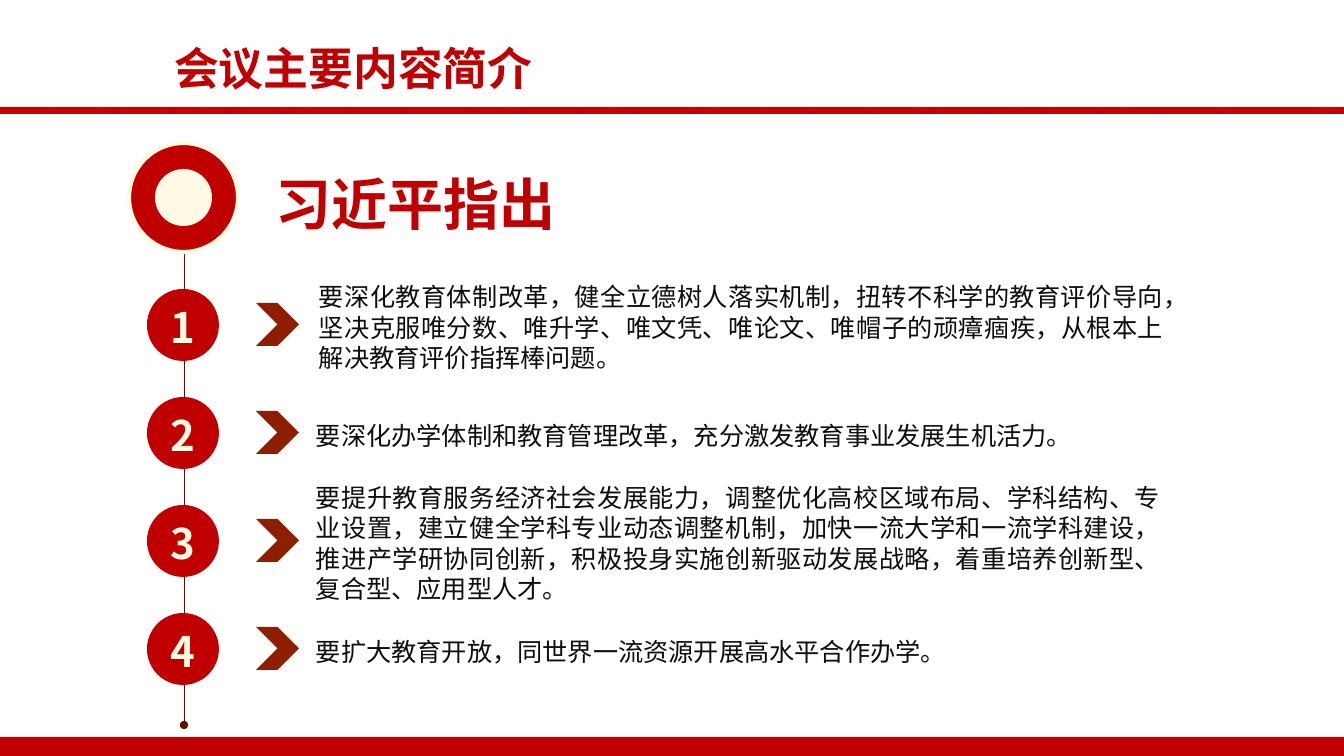
"""Build the meeting summary slide: a heading and a numbered timeline of four points."""
from lxml.etree import SubElement
from pptx import Presentation
from pptx.dml.color import RGBColor
from pptx.enum.dml import MSO_PATTERN
from pptx.enum.lang import MSO_LANGUAGE_ID
from pptx.enum.shapes import MSO_CONNECTOR, MSO_SHAPE
from pptx.enum.text import MSO_ANCHOR, MSO_AUTO_SIZE, PP_ALIGN
from pptx.oxml.ns import qn
from pptx.util import Emu, Pt

PX = 914400 / 100.8
FONT = "Noto Sans CJK SC"
RED, CREAM, BROWN, INK = "C00000", "FFFAE3", "8E1E00", "0D0D0D"


def box(*lengths):
    return [Emu(round(n * PX)) for n in lengths]


def write(sp, text, size, color, bold=True, align=PP_ALIGN.LEFT,
          anchor=MSO_ANCHOR.TOP, leading=1.3):
    tf = sp.text_frame
    tf.word_wrap = True
    tf.auto_size = MSO_AUTO_SIZE.NONE
    tf.vertical_anchor = anchor
    p = tf.paragraphs[0]
    p.alignment = align
    p.line_spacing = Pt(size * leading)
    r = p.add_run()
    r.text = text
    r.font.size = Pt(size)
    r.font.bold = bold
    r.font.color.rgb = RGBColor.from_string(color)
    r.font.name = FONT
    r.font.language_id = MSO_LANGUAGE_ID.SIMPLIFIED_CHINESE
    SubElement(r._r.rPr, qn("a:ea")).set("typeface", FONT)


prs = Presentation()
prs.slide_width, prs.slide_height = box(1344, 756)
s = prs.slides.add_slide(prs.slide_layouts[5])

title = s.shapes.title
title.left, title.top, title.width, title.height = box(164, 31, 682, 65)
write(title, "会议主要内容简介", 32, RED)

heading = s.shapes.add_textbox(*box(266, 159, 998, 78))
write(heading, "习近平指出", 40, RED)

axis = s.shapes.add_connector(MSO_CONNECTOR.STRAIGHT, *box(184, 252, 184, 725))
axis.line.color.rgb = RGBColor.from_string("591300")
axis.line.width = Pt(0.5)
SubElement(axis.line._get_or_add_ln(), qn("a:tailEnd")).set("type", "oval")
SubElement(axis._element.spPr, qn("a:effectLst"))

shapes = [
    (MSO_SHAPE.RECTANGLE, (0, 737, 1344, 19), RED),
    (MSO_SHAPE.RECTANGLE, (0, 107, 1344, 7), None),
    (MSO_SHAPE.OVAL, (129, 143, 109, 109), RED),
    (MSO_SHAPE.OVAL, (155, 169, 57, 57), CREAM),
]
for i in range(4):
    shapes.append((MSO_SHAPE.OVAL, (147, 289 + 108 * i, 72, 72), RED))
    shapes.append((MSO_SHAPE.CHEVRON, (256, 303 + 108 * i, 43, 43), BROWN))

drawn = []
for kind, place, color in shapes:
    sp = s.shapes.add_shape(kind, *box(*place))
    sp.shadow.inherit = False
    sp.line.fill.background()
    if color:
        sp.fill.solid()
        sp.fill.fore_color.rgb = RGBColor.from_string(color)
    else:
        sp.fill.patterned()
        sp.fill.pattern = MSO_PATTERN.DARK_UPWARD_DIAGONAL
        sp.fill.fore_color.rgb = RGBColor.from_string("FF0000")
        sp.fill.back_color.rgb = RGBColor.from_string(RED)
    drawn.append(sp)

badge = drawn[2]
badge.line.color.rgb = RGBColor.from_string(CREAM)
badge.line.width = Pt(3)

points = [
    (309, 3, "要深化教育体制改革，健全立德树人落实机制，扭转不科学的教育评价导向，"
             "坚决克服唯分数、唯升学、唯文凭、唯论文、唯帽子的顽瘴痼疾，"
             "从根本上解决教育评价指挥棒问题。"),
    (306, 1, "要深化办学体制和教育管理改革，充分激发教育事业发展生机活力。"),
    (306, 4, "要提升教育服务经济社会发展能力，调整优化高校区域布局、学科结构、专业设置，"
             "建立健全学科专业动态调整机制，加快一流大学和一流学科建设，"
             "推进产学研协同创新，积极投身实施创新驱动发展战略，"
             "着重培养创新型、复合型、应用型人才。"),
    (306, 1, "要扩大教育开放，同世界一流资源开展高水平合作办学。"),
]
for i, (left, lines, text) in enumerate(points):
    write(drawn[4 + 2 * i], str(i + 1), 30, CREAM, align=PP_ALIGN.CENTER,
          anchor=MSO_ANCHOR.MIDDLE)
    height = 10 + 30 * lines
    sp = s.shapes.add_textbox(*box(left, 327 + 108 * i - height // 2, 865, height))
    write(sp, text, 18, INK, bold=False, align=PP_ALIGN.JUSTIFY,
          anchor=MSO_ANCHOR.MIDDLE, leading=1.2)

prs.save("out.pptx")
